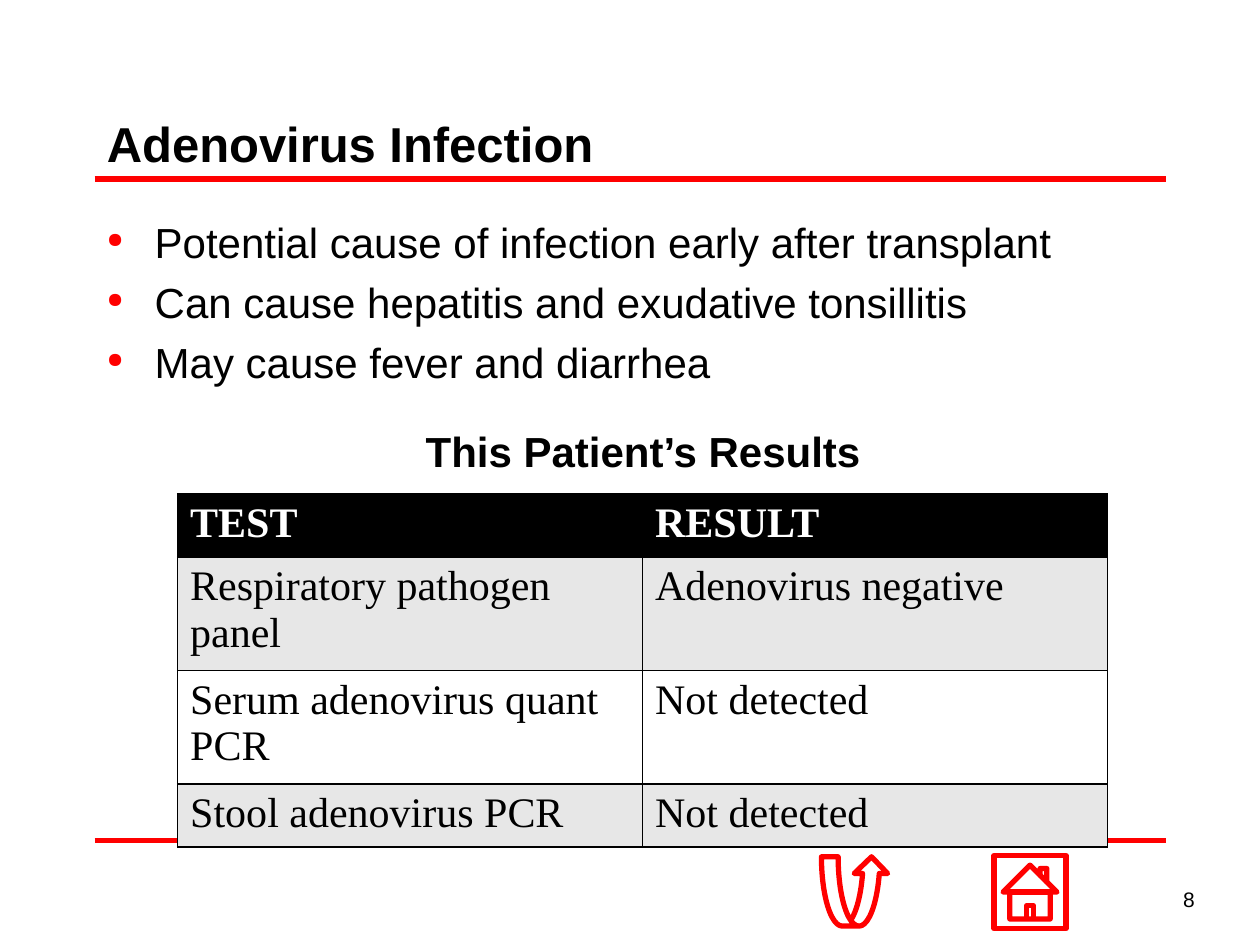
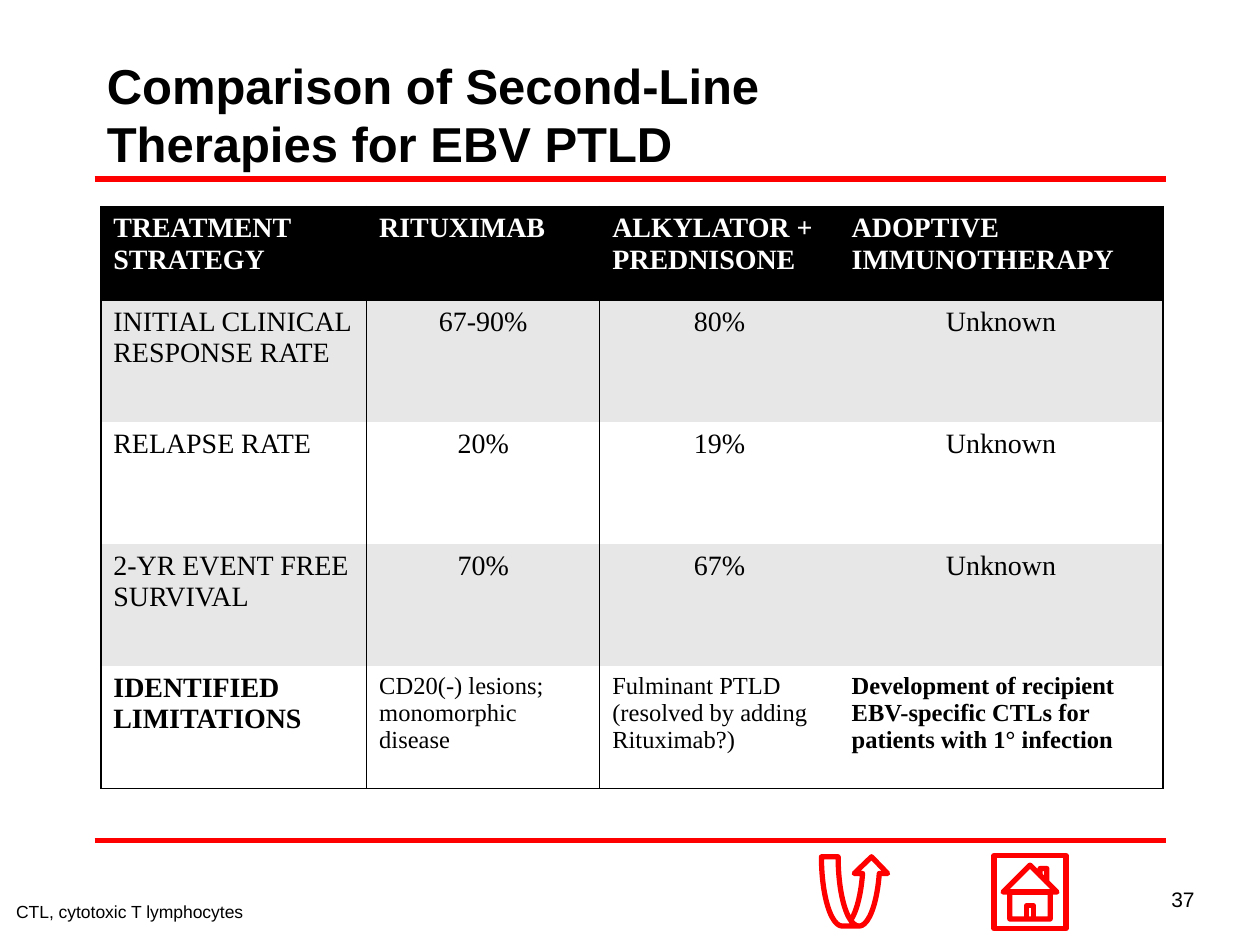
from dataclasses import dataclass

from lxml import etree
from pptx import Presentation
from pptx.dml.color import RGBColor
from pptx.enum.shapes import MSO_CONNECTOR, MSO_SHAPE
from pptx.enum.text import MSO_ANCHOR, PP_ALIGN
from pptx.oxml.ns import qn
from pptx.util import Inches, Pt

LEFT, CENTER, RIGHT = PP_ALIGN.LEFT, PP_ALIGN.CENTER, PP_ALIGN.RIGHT
TOP, MIDDLE, BOTTOM = MSO_ANCHOR.TOP, MSO_ANCHOR.MIDDLE, MSO_ANCHOR.BOTTOM
STRAIGHT = MSO_CONNECTOR.STRAIGHT
HOME, BACK = MSO_SHAPE.ACTION_BUTTON_HOME, MSO_SHAPE.CURVED_UP_ARROW


@dataclass(frozen=True)
class Theme:
    black: str = "000000"
    white: str = "FFFFFF"
    accent: str = "FF0000"
    band: str = "E7E7E7"
    sans: str = "Arial"
    serif: str = "Times New Roman"
    title: int = 28
    body: int = 24
    table: int = 16
    detail: int = 14
    number: int = 12
    note: int = 10
    rule: int = 3


@dataclass(frozen=True)
class Box:
    left: float
    top: float
    width: float
    height: float

    def emu(self) -> tuple:
        return tuple(Inches(v) for v in (self.left, self.top, self.width, self.height))


@dataclass(frozen=True)
class Cell:
    text: str
    size: int
    bold: bool = False
    align: PP_ALIGN = LEFT


@dataclass(frozen=True)
class Grid:
    """A table; v_lines and h_lines give the width in points of each grid line."""
    left: float
    top: float
    cols: tuple
    rows: tuple
    v_lines: tuple
    h_lines: tuple
    cells: list


T = Theme()

# Frame shared by both slides
RULE_LEFT, RULE_RIGHT = 0.75, 9.25
RULE_TOPS = (1.42, 6.67)
TITLE_BOX = Box(0.75, 0.42, 8.5, 1)
NUMBER_BOX = Box(7.25, 6.94, 2.33, 0.4)
NAV_BUTTONS = ((HOME, Box(7.89, 6.79, 0.57, 0.58)), (BACK, Box(6.52, 6.8, 0.53, 0.55)))

# Slide content
ADENOVIRUS_POINTS = (
    "Potential cause of infection early after transplant",
    "Can cause hepatitis and exudative tonsillitis",
    "May cause fever and diarrhea",
)
RESULTS = (
    ("TEST", "RESULT"),
    ("Respiratory pathogen panel", "Adenovirus negative"),
    ("Serum adenovirus quant PCR", "Not detected"),
    ("Stool adenovirus PCR", "Not detected"),
)
STRATEGIES = ("TREATMENT STRATEGY", "RITUXIMAB", "ALKYLATOR + PREDNISONE",
              "ADOPTIVE IMMUNOTHERAPY")
OUTCOMES = (
    ("INITIAL CLINICAL RESPONSE RATE", "67-90%", "80%", "Unknown"),
    ("RELAPSE RATE", "20%", "19%", "Unknown"),
    ("2-YR EVENT FREE SURVIVAL", "70%", "67%", "Unknown"),
)
LIMITATIONS = (
    Cell("IDENTIFIED LIMITATIONS", T.table, bold=True),
    Cell("CD20(-) lesions; monomorphic disease", T.detail),
    Cell("Fulminant PTLD (resolved by adding Rituximab?)", T.detail),
    Cell("Development of recipient EBV-specific CTLs for patients with 1° infection",
         T.detail, bold=True),
)


def rgb(color: str) -> RGBColor:
    return RGBColor.from_string(color)


def write(p, text: str, *, size: int, font: str = T.sans, color: str = T.black,
          bold: bool = False, align: PP_ALIGN = LEFT) -> None:
    """Fill one paragraph; a vertical tab in the text breaks the line."""
    p.text = text
    p.alignment = align
    for r in p.runs:
        r.font.name, r.font.size, r.font.bold = font, Pt(size), bold
        r.font.color.rgb = rgb(color)


def add_frame(slide, box: Box, anchor: MSO_ANCHOR = TOP, wrap: bool = True):
    tf = slide.shapes.add_textbox(*box.emu()).text_frame
    tf.word_wrap = wrap
    tf.vertical_anchor = anchor
    return tf


def add_text(slide, box: Box, text: str, *, anchor: MSO_ANCHOR = TOP,
             wrap: bool = True, **fmt) -> None:
    write(add_frame(slide, box, anchor, wrap).paragraphs[0], text, **fmt)


def add_bullets(slide, box: Box, points: tuple) -> None:
    tf = add_frame(slide, box)
    for i, point in enumerate(points):
        p = tf.add_paragraph() if i else tf.paragraphs[0]
        write(p, point, size=T.body)
        p.space_before = Pt(5.5)
        pPr = p._p.get_or_add_pPr()
        pPr.set("marL", str(Inches(0.38)))
        pPr.set("indent", str(-Inches(0.38)))
        clr = etree.SubElement(pPr, qn("a:buClr"))
        etree.SubElement(clr, qn("a:srgbClr"), val=T.accent)
        etree.SubElement(pPr, qn("a:buSzPct"), val="50000")
        etree.SubElement(pPr, qn("a:buChar"), char="●")


def add_rule(slide, top: float) -> None:
    line = slide.shapes.add_connector(STRAIGHT, Inches(RULE_LEFT), Inches(top),
                                      Inches(RULE_RIGHT), Inches(top))
    line.line.color.rgb = rgb(T.accent)
    line.line.width = Pt(T.rule)
    etree.SubElement(line._element.spPr, qn("a:effectLst"))


def add_button(slide, kind: MSO_SHAPE, box: Box) -> None:
    sp = slide.shapes.add_shape(kind, *box.emu())
    sp.shadow.inherit = False
    sp.fill.background()
    sp.line.color.rgb = rgb(T.accent)
    sp.line.width = Pt(T.rule)


def set_border(cell, side: str, width: float) -> None:
    ln = etree.SubElement(cell._tc.get_or_add_tcPr(), qn(f"a:ln{side}"),
                          w=str(Pt(width)))
    if width:
        fill = etree.SubElement(ln, qn("a:solidFill"))
        etree.SubElement(fill, qn("a:srgbClr"), val=T.black)
    else:
        etree.SubElement(ln, qn("a:noFill"))


def add_grid(slide, grid: Grid) -> None:
    box = Box(grid.left, grid.top, sum(grid.cols), sum(grid.rows))
    table = slide.shapes.add_table(len(grid.rows), len(grid.cols), *box.emu()).table
    for col, width in zip(table.columns, grid.cols):
        col.width = Inches(width)
    for y, height in enumerate(grid.rows):
        table.rows[y].height = Inches(height)
        fill = T.black if y == 0 else T.band if y % 2 else T.white
        for x, item in enumerate(grid.cells[y]):
            cell = table.cell(y, x)
            write(cell.text_frame.paragraphs[0], item.text, size=item.size,
                  font=T.serif, color=T.white if y == 0 else T.black,
                  bold=item.bold, align=item.align)
            for side, width in (("L", grid.v_lines[x]), ("R", grid.v_lines[x + 1]),
                                ("T", grid.h_lines[y]), ("B", grid.h_lines[y + 1])):
                set_border(cell, side, width)
            cell.fill.solid()
            cell.fill.fore_color.rgb = rgb(fill)


def add_slide(prs, title: str, number: int):
    """Start a slide with its rules, title, page number and navigation buttons."""
    slide = prs.slides.add_slide(prs.slide_layouts[6])
    for top in RULE_TOPS:
        add_rule(slide, top)
    add_text(slide, TITLE_BOX, title, anchor=BOTTOM, size=T.title, bold=True)
    add_text(slide, NUMBER_BOX, str(number), anchor=MIDDLE, size=T.number, align=RIGHT)
    for kind, box in NAV_BUTTONS:
        add_button(slide, kind, box)
    return slide


def build_adenovirus(prs) -> None:
    slide = add_slide(prs, "Adenovirus Infection", 8)
    add_bullets(slide, Box(0.75, 1.67, 8.5, 1.6), ADENOVIRUS_POINTS)
    add_text(slide, Box(3.28, 3.33, 3.69, 0.5), "This Patient’s Results",
             wrap=False, size=T.body, bold=True)
    cells = [[Cell(text, T.body, bold=y == 0) for text in row]
             for y, row in enumerate(RESULTS)]
    add_grid(slide, Grid(1.41, 3.92, (3.69,) * 2, (0.46,) * 4,
                         (1,) * 3, (1,) * 5, cells))


def build_comparison(prs) -> None:
    slide = add_slide(prs, "Comparison of Second-Line\vTherapies for EBV PTLD", 37)
    header = [Cell(text, T.table, bold=True) for text in STRATEGIES]
    outcomes = [[Cell(text, T.table, align=CENTER if x else LEFT)
                 for x, text in enumerate(row)] for row in OUTCOMES]
    add_grid(slide, Grid(0.8, 1.64, (2.11, 1.85, 1.9, 2.57), (0.74,) + (0.97,) * 4,
                         (1, 1, 1, 0, 1), (1, 2, 0, 0, 0, 1),
                         [header, *outcomes, LIMITATIONS]))
    add_text(slide, Box(0.03, 7.1, 4.53, 0.27), "CTL, cytotoxic T lymphocytes",
             size=T.note)


def main() -> None:
    prs = Presentation()
    prs.slide_width, prs.slide_height = Inches(10), Inches(7.5)
    build_adenovirus(prs)
    build_comparison(prs)
    prs.save("out.pptx")


if __name__ == "__main__":
    main()
